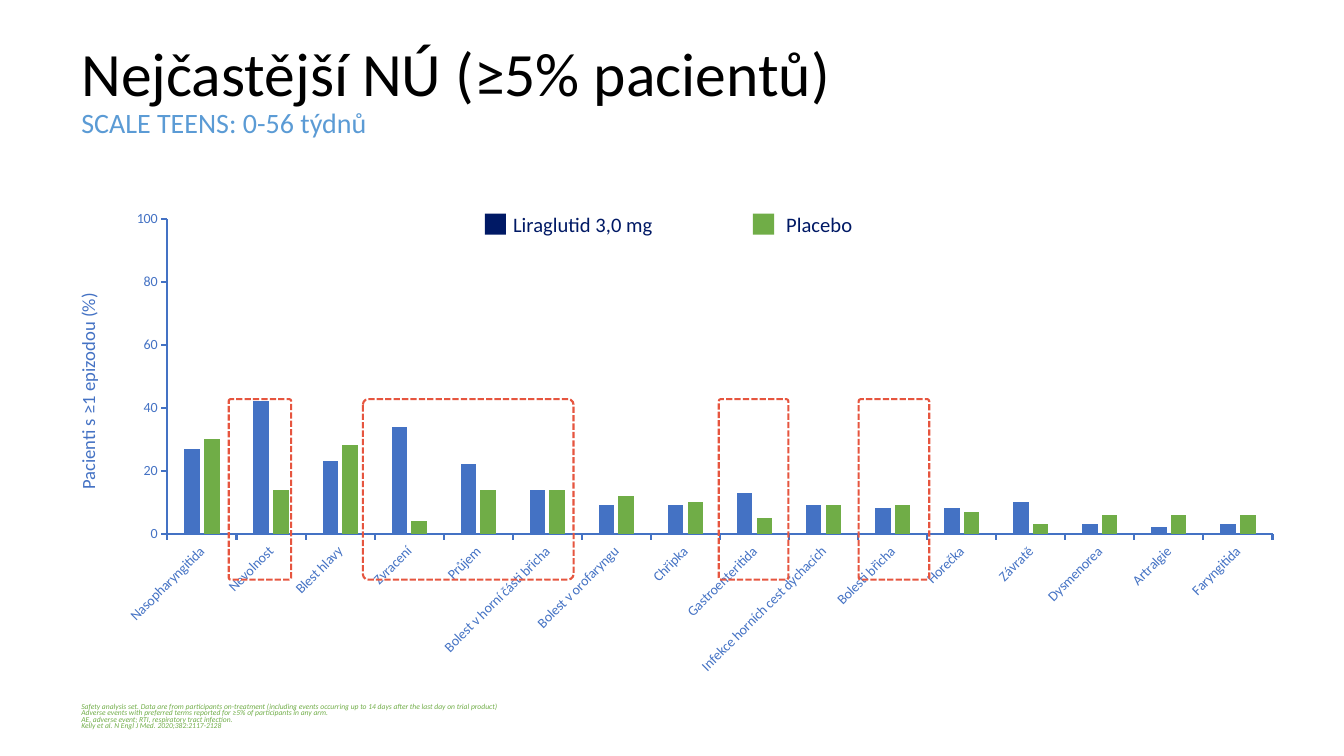
import pptx
import pptx.chart.data
import pptx.dml.color
import pptx.enum.chart
import pptx.enum.dml
import pptx.enum.shapes
import pptx.enum.text
import pptx.oxml
import pptx.oxml.ns
import pptx.util

Pt = pptx.util.Pt
ANCHOR = pptx.enum.text.MSO_ANCHOR
SHAPE = pptx.enum.shapes.MSO_SHAPE
BLUE, GREEN, NAVY = "4472C4", "70AD47", "001965"


def rgb(value):
    return pptx.dml.color.RGBColor.from_string(value)


def add_text(shapes, box, lines, size, color, anchor=ANCHOR.TOP, spacing=None):
    sp = shapes.add_textbox(*map(Pt, box))
    tf = sp.text_frame
    tf.word_wrap = True
    tf.vertical_anchor = anchor
    for i, line in enumerate(lines):
        p = tf.add_paragraph() if i else tf.paragraphs[0]
        p.text = line
        p.line_spacing = spacing
        p.font.size = Pt(size)
        p.font.name = "Calibri"
        p.font.color.rgb = rgb(color)
    return sp


prs = pptx.Presentation()
prs.slide_width, prs.slide_height = Pt(960), Pt(540)
s = prs.slides.add_slide(prs.slide_layouts[6])

title = add_text(s.shapes, (51, 14.4, 858, 102), ["Nejčastější NÚ (≥5% pacientů)"],
                 44, "000000", ANCHOR.MIDDLE, 0.9)
p = title.text_frame.paragraphs[0]
p.add_line_break()
r = p.add_run()
r.text = "SCALE TEENS: 0-56 týdnů"
r.font.size = Pt(20)
r.font.color.rgb = rgb("5B9BD5")

notes = [
    "Safety analysis set. Data are from participants on-treatment (including events "
    "occurring up to 14 days after the last day on trial product)\v"
    "Adverse events with preferred terms reported for ≥5% of participants in any arm.\v"
    "AE, adverse event; RTI, respiratory tract infection.",
    "Kelly et al. N Engl J Med. 2020;382:2117-2128",
]
footnote = add_text(s.shapes, (51, 499.7, 858, 25.2), notes, 5.4, GREEN, ANCHOR.BOTTOM, 0.7)
for p in footnote.text_frame.paragraphs:
    p.font.italic = True

events = [
    ("Nasopharyngitida", 27, 30),
    ("Nevolnost", 42, 14),
    ("Blest hlavy", 23, 28),
    ("Zvracení", 34, 4),
    ("Průjem", 22, 14),
    ("Bolest v horní části břicha", 14, 14),
    ("Bolest v orofaryngu", 9, 12),
    ("Chřipka", 9, 10),
    ("Gastroenteritida", 13, 5),
    ("Infekce horních cest dýchacích", 9, 9),
    ("Bolesti břicha", 8, 9),
    ("Horečka", 8, 7),
    ("Závratě", 10, 3),
    ("Dysmenorea", 3, 6),
    ("Artralgie", 2, 6),
    ("Faryngitida", 3, 6),
]
names, liraglutide, placebo = zip(*events)
data = pptx.chart.data.CategoryChartData()
data.categories = names
data.add_series("Series 1", liraglutide)
data.add_series("Series 2", placebo)
chart = s.shapes.add_chart(pptx.enum.chart.XL_CHART_TYPE.COLUMN_CLUSTERED,
                           Pt(72.7), Pt(144), Pt(852.5), Pt(343.4), data).chart
chart.has_legend = False
chart.has_title = False
chart.font.name = "Calibri"
chart.font.size = Pt(10)
chart.font.color.rgb = rgb(BLUE)

plot = chart.plots[0]
plot.gap_width = 219
plot.overlap = -27
plot.vary_by_categories = False
for series, color in zip(plot.series, (BLUE, GREEN)):
    series.format.fill.solid()
    series.format.fill.fore_color.rgb = rgb(color)

for axis in (chart.category_axis, chart.value_axis):
    axis.has_major_gridlines = False
    axis.major_tick_mark = pptx.enum.chart.XL_TICK_MARK.OUTSIDE
    axis.minor_tick_mark = pptx.enum.chart.XL_TICK_MARK.NONE
    axis.format.line.color.rgb = rgb(BLUE)
    axis.format.line.width = Pt(1.5)
    axis.tick_labels.font.name = "Calibri"
    axis.tick_labels.font.size = Pt(10)
    axis.tick_labels.font.color.rgb = rgb(BLUE)
chart.value_axis.minimum_scale = 0
chart.value_axis.maximum_scale = 100
chart.value_axis.major_unit = 20
chart.category_axis._element.xpath("c:txPr/a:bodyPr")[0].set("rot", "-2700000")

area = chart._chartSpace.xpath("c:chart/c:plotArea")[0]
for layout in area.xpath("c:layout"):
    area.remove(layout)
area.insert(0, pptx.oxml.parse_xml(
    f'<c:layout {pptx.oxml.ns.nsdecls("c")}><c:manualLayout><c:layoutTarget val="inner"/>'
    '<c:xMode val="edge"/><c:yMode val="edge"/><c:x val="0.055"/><c:y val="0.036"/>'
    '<c:w val="0.926"/><c:h val="0.655"/></c:manualLayout></c:layout>'))

axis_title = add_text(s.shapes, (-71.3, 267.8, 268.6, 23.8), ["Pacienti s ≥1 epizodou (%)"],
                      13.3, BLUE)
axis_title.rotation = 270
axis_title.text_frame.paragraphs[0].alignment = pptx.enum.text.PP_ALIGN.CENTER

highlights = s.shapes.add_group_shape().shapes
for x, width in ((163.4, 44.6), (259.2, 150.5), (513.4, 49.7), (613.4, 50.4)):
    sp = highlights.add_shape(SHAPE.ROUNDED_RECTANGLE, Pt(x), Pt(285.1), Pt(width), Pt(128.9))
    sp.adjustments[0] = 0.03
    sp.shadow.inherit = False
    sp.fill.background()
    sp.line.color.rgb = rgb("E6553F")
    sp.line.width = Pt(1.5)
    sp.line.dash_style = pptx.enum.dml.MSO_LINE.SQUARE_DOT

legend = s.shapes.add_group_shape().shapes
for label, color, x, text_x, width in (
    ("Liraglutid 3,0 mg", NAVY, 346.3, 366.5, 118),
    ("Placebo", GREEN, 537.8, 561.6, 57),
):
    sp = legend.add_shape(SHAPE.RECTANGLE, Pt(x), Pt(152.6), Pt(15.1), Pt(15.1))
    sp.shadow.inherit = False
    sp.fill.solid()
    sp.fill.fore_color.rgb = rgb(color)
    sp.line.fill.background()
    tf = add_text(legend, (text_x, 151.2, width, 18), [label], 14.7, NAVY).text_frame
    tf.margin_left = tf.margin_top = tf.margin_right = tf.margin_bottom = 0

prs.save("out.pptx")
